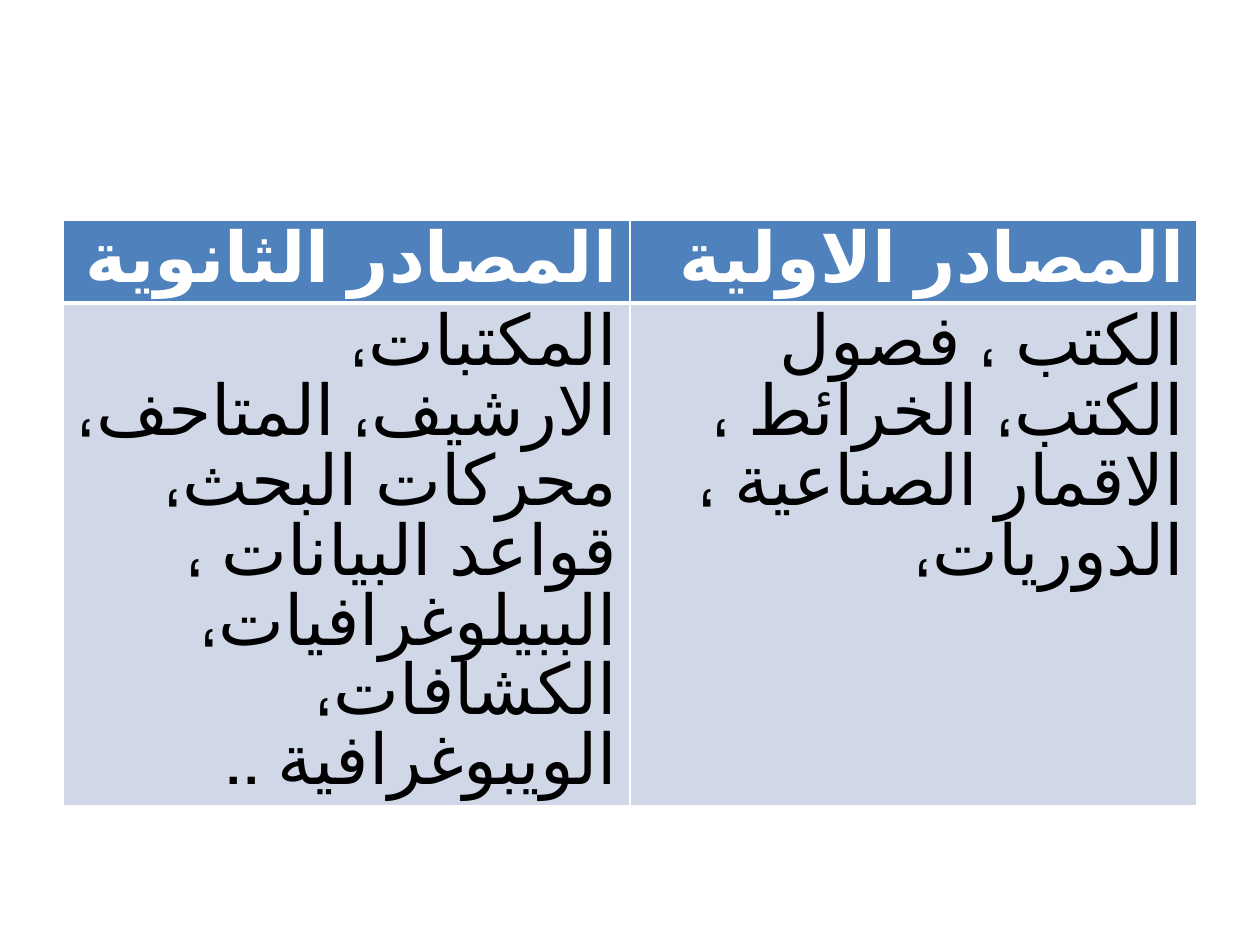
import lxml.etree
import pptx
import pptx.dml.color
import pptx.enum.lang
import pptx.enum.text
import pptx.oxml.ns
import pptx.util

Inches = pptx.util.Inches
RGBColor = pptx.dml.color.RGBColor

WHITE = RGBColor(0xFF, 0xFF, 0xFF)
BLACK = RGBColor(0, 0, 0)
HEADER_BLUE = RGBColor(0x4F, 0x81, 0xBD)
BODY_BLUE = RGBColor(0xD0, 0xD8, 0xE8)

SOURCES = [
    ["المصادر الثانوية ", "المصادر الاولية "],
    [
        "المكتبات، الارشيف، المتاحف، محركات البحث، قواعد البيانات ، "
        "الببيلوغرافيات، الكشافات، الويبوغرافية ..",
        "الكتب ، فصول الكتب، الخرائط ، الاقمار الصناعية ، الدوريات، ",
    ],
]


def set_borders(cell, color, widths):
    """Draw the cell's edges; widths are points for left, right, top, bottom."""
    qn = pptx.oxml.ns.qn
    tcPr = cell._tc.get_or_add_tcPr()
    for i, (side, width) in enumerate(zip("LRTB", widths)):
        ln = lxml.etree.Element(qn(f"a:ln{side}"), w=str(pptx.util.Pt(width)))
        fill = lxml.etree.SubElement(ln, qn("a:solidFill"))
        lxml.etree.SubElement(fill, qn("a:srgbClr"), val=str(color))
        tcPr.insert(i, ln)


def fill_cell(cell, text, is_header):
    cell.fill.solid()
    cell.fill.fore_color.rgb = HEADER_BLUE if is_header else BODY_BLUE
    set_borders(cell, WHITE, (1, 1, 1, 3) if is_header else (1, 1, 3, 1))

    # Right-to-left Arabic text
    p = cell.text_frame.paragraphs[0]
    r = p.add_run()
    r.text = text
    p.alignment = pptx.enum.text.PP_ALIGN.RIGHT
    p._p.get_or_add_pPr().set("rtl", "1")
    r.font.language_id = pptx.enum.lang.MSO_LANGUAGE_ID.ARABIC
    r.font.name = "Calibri"
    r.font.size = pptx.util.Pt(40)
    r.font.bold = is_header
    r.font.color.rgb = WHITE if is_header else BLACK


def add_sources_table(s, left, top, width, height):
    header_height = Inches(0.65)
    table = s.shapes.add_table(
        len(SOURCES), len(SOURCES[0]), left, top, width, height
    ).table
    table.rows[0].height = header_height
    table.rows[1].height = height - header_height
    for i, row in enumerate(SOURCES):
        for j, text in enumerate(row):
            fill_cell(table.cell(i, j), text, is_header=i == 0)


def main():
    prs = pptx.Presentation()
    prs.slide_width, prs.slide_height = Inches(10), Inches(7.5)
    s = prs.slides.add_slide(prs.slide_layouts[6])
    add_sources_table(s, Inches(0.5), Inches(1.75), Inches(9), Inches(4.63))
    prs.save("out.pptx")


if __name__ == "__main__":
    main()
